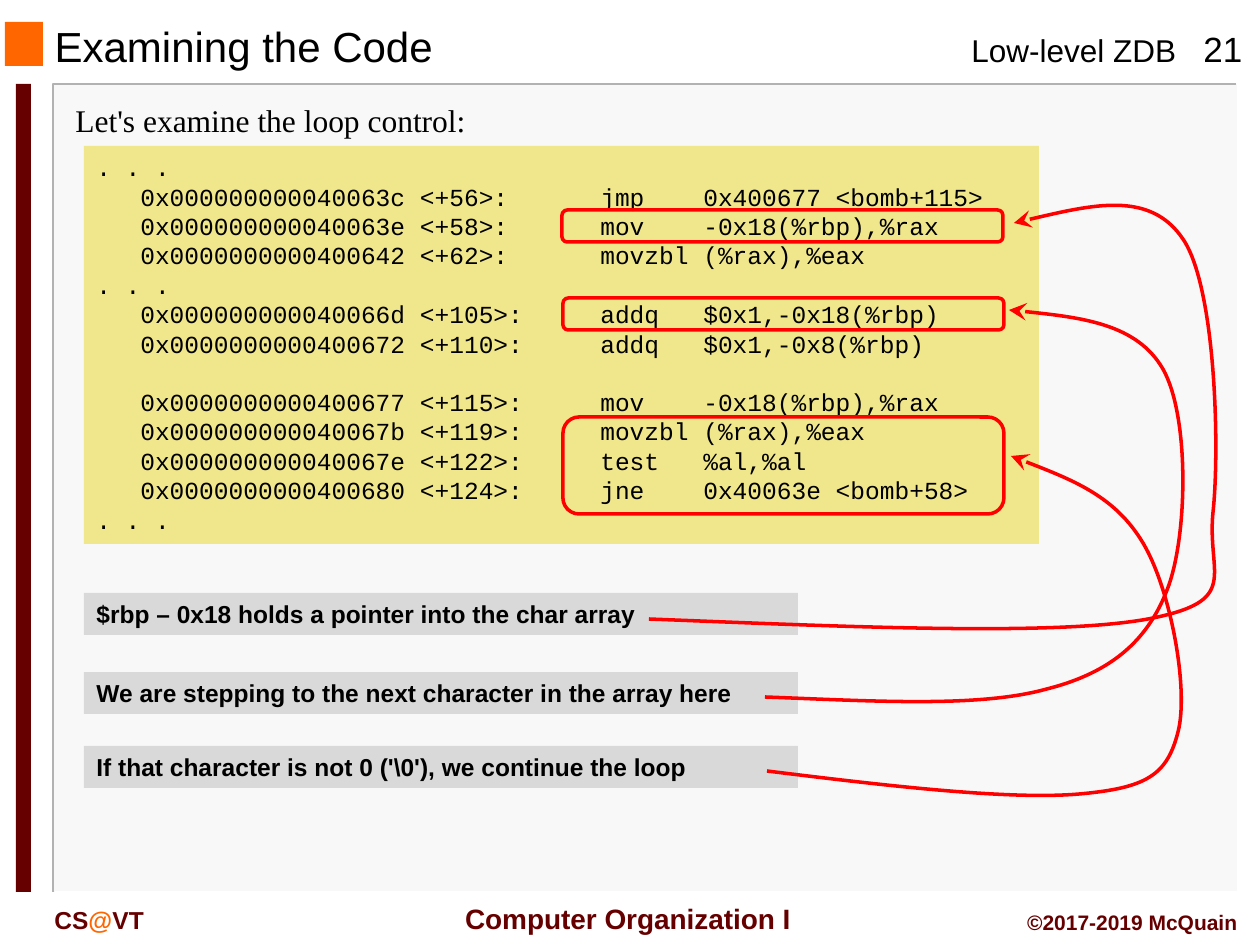
from dataclasses import dataclass

from pptx import Presentation
from pptx.dml.color import RGBColor
from pptx.enum.shapes import MSO_SHAPE
from pptx.enum.text import MSO_ANCHOR, MSO_AUTO_SIZE, PP_ALIGN
from pptx.oxml.ns import qn
from pptx.util import Pt
from lxml.etree import SubElement

PX = 914400 / 126


@dataclass(frozen=True)
class Theme:
    ink: str = "000000"
    maroon: str = "660000"
    orange: str = "FF6600"
    panel: str = "F8F8F8"
    edge: str = "B2B2B2"
    white: str = "FFFFFF"
    khaki: str = "F0E68C"
    gray: str = "D9D9D9"
    red: str = "FF0000"
    sans: str = "Arial"
    serif: str = "Times New Roman"
    mono: str = "Courier New"
    head: int = 24
    page: int = 20
    text: int = 18
    foot: int = 16
    code: int = 14
    small: int = 12
    rule: int = 1
    mark: int = 2


T = Theme()
LEFT, CENTER, RIGHT = PP_ALIGN.LEFT, PP_ALIGN.CENTER, PP_ALIGN.RIGHT

TITLE = "Examining the Code"
BARS = [
    ((54, 84, 1184, 808), T.panel),
    ((5, 22, 38, 44), T.orange),
    ((16, 84, 15, 808), T.maroon),
]
EDGES = [
    ([(1236, 84), (53, 84), (53, 892)], T.edge),
    ([(1238, 84), (1238, 892), (55, 892)], T.white),
]
# box, runs of (text, colour), font, size, bold, alignment
LABELS = [
    ((959, 25, 238, 50), [("Low-level ZDB", T.ink)], T.sans, T.text, False, LEFT),
    ((442, 895, 372, 47), [("Computer Organization I", T.maroon)],
     T.sans, T.foot, True, CENTER),
    ((1181, 21, 84, 54), [("21", T.ink)], T.sans, T.page, False, CENTER),
    ((42, 899, 189, 42), [("CS", T.maroon), ("@", T.orange), ("VT", T.maroon)],
     T.sans, T.code, True, LEFT),
    ((882, 903, 368, 38), [("©2017-2019 McQuain", T.maroon)],
     T.sans, T.small, True, RIGHT),
    ((63, 95, 1166, 50), [("Let's examine the loop control:", T.ink)],
     T.serif, T.text, False, LEFT),
]
# address, offset, operation, operands; None is an omitted stretch
CODE = [
    None,
    ("0x000000000040063c", 56, "jmp", "0x400677 <bomb+115>"),
    ("0x000000000040063e", 58, "mov", "-0x18(%rbp),%rax"),
    ("0x0000000000400642", 62, "movzbl", "(%rax),%eax"),
    None,
    ("0x000000000040066d", 105, "addq", "$0x1,-0x18(%rbp)"),
    ("0x0000000000400672", 110, "addq", "$0x1,-0x8(%rbp)"),
    ("0x0000000000400677", 115, "mov", "-0x18(%rbp),%rax"),
    ("0x000000000040067b", 119, "movzbl", "(%rax),%eax"),
    ("0x000000000040067e", 122, "test", "%al,%al"),
    ("0x0000000000400680", 124, "jne", "0x40063e <bomb+58>"),
    None,
]
CODE_BOX = (84, 146, 955, 398)
TABS = (44, 504, 607)
LOOP_TEST = 115  # offset of the line set apart by a gap
NOTES = [
    (593, "$rbp – 0x18 holds a pointer into the char array"),
    (672, "We are stepping to the next character in the array here"),
    (746, "If that character is not 0 ('\\0'), we continue the loop"),
]
MARKS = [(562, 210, 441, 32), (563, 298, 441, 32), (563, 417, 441, 97)]
# start point, then two controls and an end for each bend
ARROWS = [
    [(649, 619), (852, 627), (1055, 636), (1148, 619),
     (1242, 601), (1207, 576), (1213, 513),
     (1220, 450), (1216, 287), (1183, 239),
     (1150, 190), (1082, 207), (1014, 223)],
    [(765, 697), (872, 701), (979, 708), (1047, 689),
     (1114, 672), (1150, 638), (1169, 585),
     (1188, 530), (1189, 415), (1163, 369),
     (1137, 324), (1072, 316), (1009, 310)],
    [(767, 771), (888, 786), (1009, 800), (1079, 794),
     (1147, 788), (1167, 775), (1178, 732),
     (1189, 690), (1171, 590), (1143, 543),
     (1115, 496), (1063, 476), (1011, 456)],
]


def px(*vals):
    return [round(v * PX) for v in vals]


def paint(shape, fill=None, line=None, width=T.mark):
    shape.shadow.inherit = False
    if fill:
        shape.fill.solid()
        shape.fill.fore_color.rgb = RGBColor.from_string(fill)
    else:
        shape.fill.background()
    if line:
        shape.line.color.rgb = RGBColor.from_string(line)
        shape.line.width = Pt(width)
    else:
        shape.line.fill.background()


def block(shapes, box, fill=None, line=None, kind=MSO_SHAPE.RECTANGLE):
    shape = shapes.add_shape(kind, *px(*box))
    paint(shape, fill, line)
    return shape


def write(para, runs, font, size, bold=False, align=LEFT):
    para.alignment = align
    for text, color in runs:
        run = para.add_run()
        run.text = text
        run.font.name, run.font.size, run.font.bold = font, Pt(size), bold
        run.font.color.rgb = RGBColor.from_string(color)


def frame(shape, anchor=MSO_ANCHOR.TOP):
    tf = shape.text_frame
    tf.word_wrap = True
    tf.auto_size = MSO_AUTO_SIZE.NONE
    tf.vertical_anchor = anchor
    return tf


def trace(shapes, pts, color, width):
    pen = shapes.build_freeform(*pts[0], scale=PX)
    pen.add_line_segments(pts[1:], close=False)
    shape = pen.convert_to_shape()
    paint(shape, None, color, width)
    return shape


def bend(shape):
    """Turn each three straight steps into one Bezier curve with an arrowhead."""
    path = next(shape.element.iter(qn("a:path")))
    steps = path.findall(qn("a:lnTo"))
    for i in range(0, len(steps), 3):
        curve = SubElement(path, qn("a:cubicBezTo"))
        for step in steps[i:i + 3]:
            curve.append(step[0])
            path.remove(step)
    SubElement(shape.line._get_or_add_ln(), qn("a:tailEnd"),
               type="stealth", w="lg", len="lg")


def list_code(shapes):
    tf = frame(block(shapes, CODE_BOX, T.khaki))
    for i, row in enumerate(CODE):
        para = tf.add_paragraph() if i else tf.paragraphs[0]
        text = ". . ."
        if row:
            addr, off, op, args = row
            text = f"\t{addr} <+{off}>:\t{op}\t{args}"
            if off == LOOP_TEST:
                para.space_before = Pt(16.5)
        write(para, [(text, T.ink)], T.mono, T.code)
        stops = SubElement(para._p.get_or_add_pPr(), qn("a:tabLst"))
        for pos in px(*TABS):
            SubElement(stops, qn("a:tab"), pos=str(pos), algn="l")


def main():
    prs = Presentation()
    prs.slide_width, prs.slide_height = px(1260, 945)
    slide = prs.slides.add_slide(prs.slide_layouts[5])
    shapes = slide.shapes

    for box, color in BARS:
        block(shapes, box, color)
    for pts, color in EDGES:
        trace(shapes, pts, color, T.rule)

    title = shapes.title
    title.left, title.top, title.width, title.height = px(42, 22, 798, 48)
    write(frame(title, MSO_ANCHOR.MIDDLE).paragraphs[0],
          [(TITLE, T.ink)], T.sans, T.head)

    for box, *style in LABELS:
        write(frame(shapes.add_textbox(*px(*box))).paragraphs[0], *style)

    list_code(shapes)
    for top, text in NOTES:
        note = block(shapes, (84, top, 714, 42), T.gray)
        write(frame(note).paragraphs[0], [(text, T.ink)], T.sans, T.code, True)
    for box in MARKS:
        block(shapes, box, None, T.red, MSO_SHAPE.ROUNDED_RECTANGLE)
    for pts in ARROWS:
        bend(trace(shapes, pts, T.red, T.mark))

    prs.save("out.pptx")


if __name__ == "__main__":
    main()
